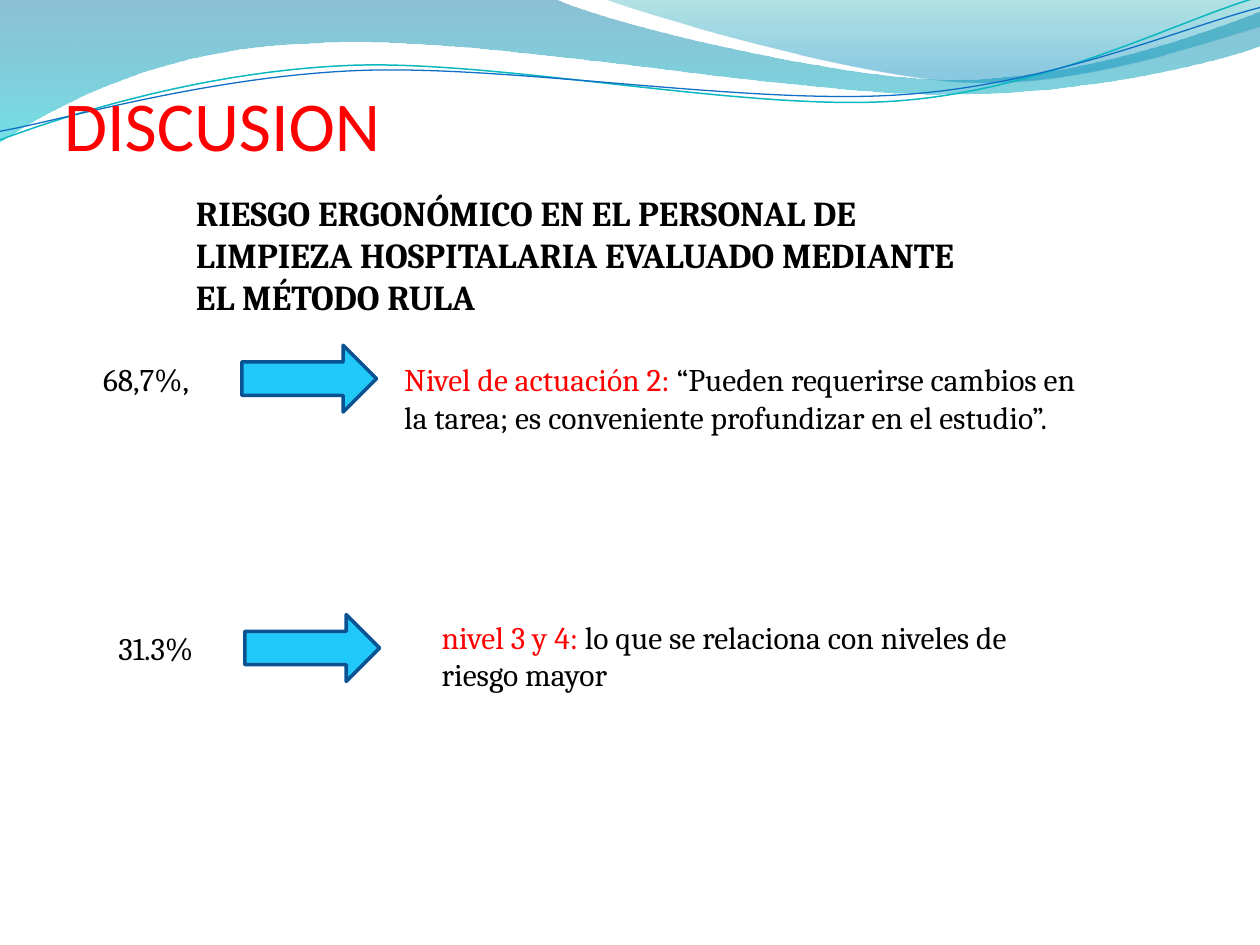
import dataclasses
import typing

import lxml.etree
import pptx
import pptx.dml.color
import pptx.enum.dml
import pptx.enum.shapes
import pptx.enum.text
import pptx.oxml.ns
import pptx.util

COLORS = {
    "red": "FF0000", "black": "000000", "arrow": "20C9F8", "outline": "0B5292",
    "wave_top": "0074A1", "wave_bottom": "00C6CF", "crest_top": "00A1A9",
    "crest_bottom": "008BBF", "teal": "0AB8BF", "blue": "0F6FC6",
}
Point = tuple[float, float]


@dataclasses.dataclass
class Stop:
    position: float
    color: str
    opacity: int


@dataclasses.dataclass
class Curve:
    start: Point
    segments: list[tuple[Point, ...]]
    stops: tuple[Stop, ...] = ()
    color: str = ""
    weight: float = 0
    rotation: float = 0


@dataclasses.dataclass
class Label:
    frame: tuple[float, float, float, float]
    spans: list[tuple[str, str]]
    size: float = 18
    font: str = "Cambria"
    bold: bool = False
    layout: dict[str, typing.Any] = dataclasses.field(default_factory=dict)


TITLE_LAYOUT = {
    "vertical_anchor": pptx.enum.text.MSO_ANCHOR.BOTTOM, "margin_left": 0,
    "margin_right": 0, "margin_top": pptx.util.Pt(3.6), "margin_bottom": 0,
}
CURVES = [
    Curve((0, 0), [
        ((316.8, -0.7),),
        ((342.7, 12.2), (478.1, 45.4), (545.8, 45.4)),
        ((614.2, 45.4), (689.8, 18.7), (720, 6.5)),
        ((720.7, 25.9),),
        ((707.8, 31.7), (626.4, 54.7), (537.1, 54)),
        ((447.8, 54), (275, 20.2), (185, 24.5)),
        ((92.9, 25.9), (33.1, 59.8), (-0.7, 81.4)),
        ((0, 0),),
    ], stops=(Stop(0, "wave_top", 45), Stop(1, "wave_bottom", 55))),
    Curve((344.9, -0.7), [
        ((366.5, 7.9), (491, 44.6), (553.7, 46.8)),
        ((617.8, 49.7), (691.9, 23), (720, 15.1)),
        ((720, 0),),
        ((344.9, -0.7),),
    ], stops=(Stop(0, "crest_top", 30), Stop(0.8, "crest_bottom", 45))),
    Curve((-1.4, 63), [
        ((33.8, 51.7), (114.1, 29.4), (199.8, 29.9)),
        ((284.8, 30.3), (425.8, 67.3), (512.4, 64.9)),
        ((599, 62.4), (676.5, 25.7), (720.2, 15.5)),
    ], color="teal", weight=0.85, rotation=357.3),
    Curve((-1.1, 58), [
        ((32.9, 53.8), (118.3, 32.5), (204.1, 33)),
        ((290.6, 33.4), (428.9, 63.8), (515.5, 61.4)),
        ((601.3, 59.6), (678.5, 30.1), (721.4, 21.3)),
    ], color="blue", weight=0.75, rotation=357.3),
]
LABELS = [
    Label((36.7, 37.4, 211, 56.9), [("DISCUSION", "red")], 40, "Calibri",
          layout=TITLE_LAYOUT),
    Label((51.9, 202.2, 72, 29), [("68,7%,", "black")], layout={"word_wrap": False}),
    Label((223.9, 202.1, 402.5, 72.7), [
        ("Nivel de actuación 2: ", "red"),
        ("“Pueden requerirse cambios en la tarea; es conveniente profundizar "
         "en el estudio”.", "black"),
    ]),
    Label((104.9, 105.8, 447.8, 80), [
        ("RIESGO ERGONÓMICO EN EL PERSONAL DE LIMPIEZA HOSPITALARIA EVALUADO "
         "MEDIANTE EL MÉTODO RULA", "black"),
    ], 20, bold=True),
    Label((245.3, 349.4, 360, 51), [
        ("nivel 3 y 4: ", "red"),
        ("lo que se relaciona con niveles de riesgo mayor", "black"),
    ]),
    Label((60.5, 355.7, 61.2, 29), [("31.3%", "black")], layout={"word_wrap": False}),
]
ARROWS = [(140, 351.2), (138.2, 197.3)]
ARROW_SIZE = (77, 38.2)


def rgb(name: str) -> pptx.dml.color.RGBColor:
    """Return the named colour."""
    return pptx.dml.color.RGBColor.from_string(COLORS[name])


def points(values: typing.Iterable[float]) -> tuple[int, ...]:
    """Convert point values to lengths."""
    return tuple(pptx.util.Pt(value) for value in values)


def set_values(target: typing.Any, values: dict[str, typing.Any]) -> None:
    """Set each attribute named in the format values."""
    for name, value in values.items():
        setattr(target, name, value)


def bend_segments(shape: typing.Any, segments: list[tuple[Point, ...]]) -> None:
    """Turn each run of three control nodes into one cubic curve."""
    nodes = iter(list(shape.element.spPr.iter(pptx.oxml.ns.qn("a:lnTo"))))
    for segment in segments:
        group = [next(nodes) for _ in segment]
        if len(group) == 3:
            cubic = lxml.etree.Element(pptx.oxml.ns.qn("a:cubicBezTo"))
            group[0].addprevious(cubic)
            for node in group:
                cubic.append(node[0])
                node.getparent().remove(node)


def fill_gradient(shape: typing.Any, stops: tuple[Stop, ...]) -> None:
    """Fill a shape from top to bottom with translucent stops."""
    shape.fill.gradient()
    shape.fill.gradient_angle = 270
    for target, stop in zip(shape.fill.gradient_stops, stops):
        target.color.rgb = rgb(stop.color)
        target.position = stop.position
    tag = pptx.oxml.ns.qn("a:srgbClr")
    for element, stop in zip(shape.element.spPr.iter(tag), stops):
        alpha = lxml.etree.SubElement(element, pptx.oxml.ns.qn("a:alpha"))
        alpha.set("val", str(stop.opacity * 1000))


def draw_curve(page: typing.Any, curve: Curve) -> None:
    """Draw a filled wave or an open wavy line."""
    builder = page.shapes.build_freeform(*points(curve.start))
    nodes = [points(node) for segment in curve.segments for node in segment]
    builder.add_line_segments(nodes, close=bool(curve.stops))
    shape = builder.convert_to_shape()
    bend_segments(shape, curve.segments)
    shape.shadow.inherit = False
    shape.rotation = curve.rotation
    if curve.stops:
        fill_gradient(shape, curve.stops)
        shape.line.fill.background()
    else:
        shape.fill.background()
        shape.line.color.rgb = rgb(curve.color)
        shape.line.width = pptx.util.Pt(curve.weight)


def draw_label(page: typing.Any, label: Label) -> None:
    """Draw a text box with coloured spans."""
    box = page.shapes.add_textbox(*points(label.frame))
    set_values(box.text_frame, {"word_wrap": True} | label.layout)
    para = box.text_frame.paragraphs[0]
    for text, color in label.spans:
        span = para.add_run()
        span.text = text
        set_values(span.font, {"name": label.font, "size": pptx.util.Pt(label.size),
                               "bold": label.bold})
        span.font.color.rgb = rgb(color)


def draw_arrow(page: typing.Any, corner: Point) -> None:
    """Draw a block arrow pointing right."""
    kind = pptx.enum.shapes.MSO_SHAPE.RIGHT_ARROW
    arrow = page.shapes.add_shape(kind, *points(corner + ARROW_SIZE))
    arrow.shadow.inherit = False
    arrow.fill.solid()
    arrow.fill.fore_color.rgb = rgb("arrow")
    arrow.line.color.rgb = rgb("outline")
    arrow.line.width = pptx.util.Pt(2)


def main() -> None:
    """Build and save the slide."""
    deck = pptx.Presentation()
    set_values(deck, {"slide_width": pptx.util.Pt(720), "slide_height": pptx.util.Pt(540)})
    page = deck.slides.add_slide(deck.slide_layouts[6])
    for curve in CURVES:
        draw_curve(page, curve)
    for label in LABELS:
        draw_label(page, label)
    for corner in ARROWS:
        draw_arrow(page, corner)
    deck.save("out.pptx")


if __name__ == "__main__":
    main()
